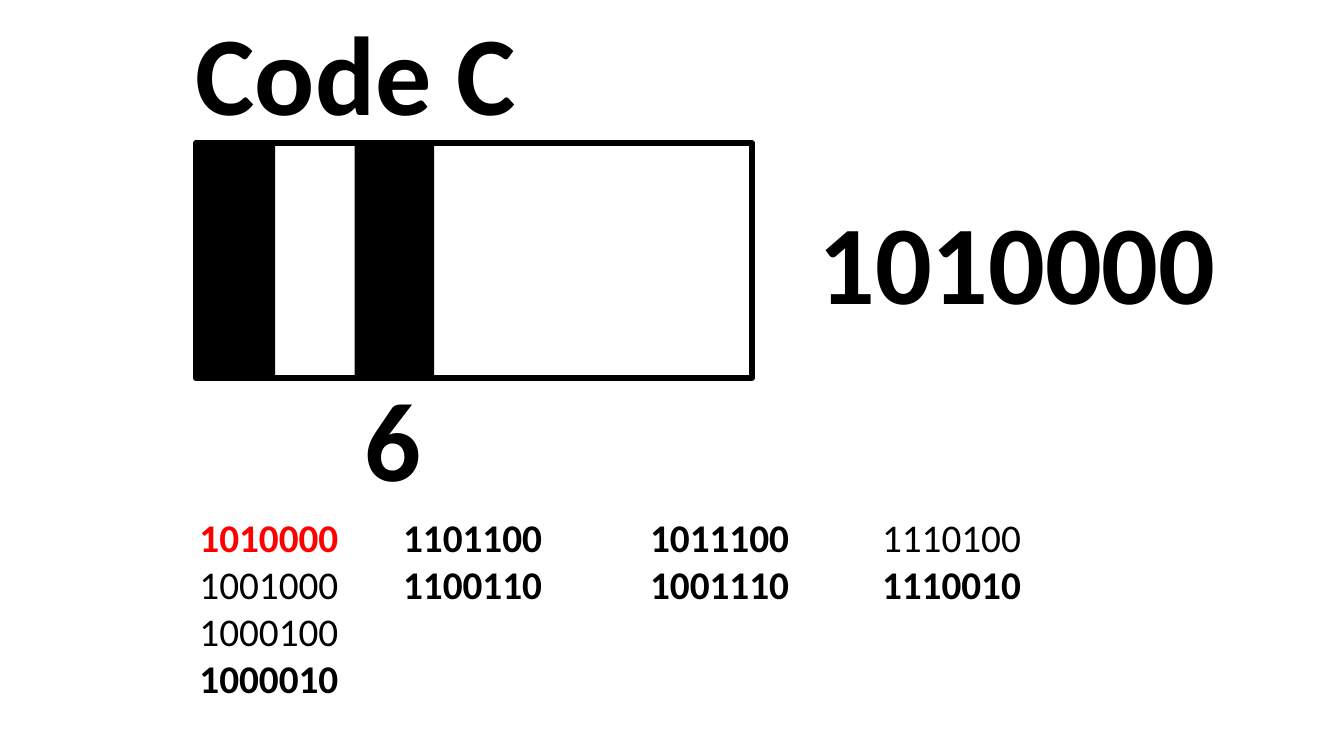
from dataclasses import dataclass
from pptx import Presentation
from pptx.dml.color import RGBColor
from pptx.enum.shapes import MSO_SHAPE
from pptx.enum.text import MSO_ANCHOR, MSO_AUTO_SIZE, PP_ALIGN
from pptx.util import Inches, Pt


@dataclass(frozen=True)
class Theme:
    font: str = "Calibri"
    ink: RGBColor = RGBColor(0, 0, 0)
    mark: RGBColor = RGBColor(255, 0, 0)
    large: int = 80
    small: int = 28
    frame: int = 4


THEME = Theme()
CODE = "1010000"
LISTS = [
    (1.88, 2.02, [(CODE, True), ("1001000", False), ("1000100", False), ("1000010", True)]),
    (3.9, 2.27, [("1101100", True), ("1100110", True)]),
    (6.35, 2.27, [("1011100", True), ("1001110", True)]),
    (8.65, 2.27, [("1110100", False), ("1110010", True)]),
]


def write(para, text, size=THEME.large, bold=True, color=THEME.ink):
    para.alignment = PP_ALIGN.LEFT
    run = para.add_run()
    run.text = text
    font = run.font
    font.name = THEME.font
    font.size = Pt(size)
    font.bold = bold
    font.color.rgb = color


def add_title(slide, box, text):
    title = slide.shapes.title
    title.left, title.top, title.width, title.height = map(Inches, box)
    frame = title.text_frame
    frame.word_wrap = True
    frame.auto_size = MSO_AUTO_SIZE.NONE
    frame.vertical_anchor = MSO_ANCHOR.TOP
    write(frame.paragraphs[0], text)


def add_text(slide, box, lines):
    frame = slide.shapes.add_textbox(*map(Inches, box)).text_frame
    frame.word_wrap = True
    frame.auto_size = MSO_AUTO_SIZE.SHAPE_TO_FIT_TEXT
    for index, style in enumerate(lines):
        para = frame.add_paragraph() if index else frame.paragraphs[0]
        write(para, **style)


def add_rect(slide, box):
    rect = slide.shapes.add_shape(MSO_SHAPE.RECTANGLE, *map(Inches, box))
    rect.shadow.inherit = False
    return rect


def add_code(slide, box, code):
    left, top, width, height = box
    frame = add_rect(slide, box)
    frame.fill.background()
    frame.line.color.rgb = THEME.ink
    frame.line.width = Pt(THEME.frame)
    step = width / len(code)
    for index, bit in enumerate(code):
        if bit == "1":
            bar = add_rect(slide, (left + index * step, top, step, height))
            bar.fill.solid()
            bar.fill.fore_color.rgb = THEME.ink
            bar.line.fill.background()


def add_lists(slide, top):
    for left, width, rows in LISTS:
        lines = [
            dict(text=text, bold=bold, size=THEME.small,
                 color=THEME.mark if text == CODE else THEME.ink)
            for text, bold in rows
        ]
        add_text(slide, (left, top, width, 0.1 + 0.47 * len(rows)), lines)


def main():
    deck = Presentation()
    deck.slide_width, deck.slide_height = Inches(13.33), Inches(7.5)
    slide = deck.slides.add_slide(deck.slide_layouts[5])
    add_title(slide, (1.84, -0.02, 5.62, 1.45), "Code C")
    add_code(slide, (1.94, 1.42, 5.52, 2.33), CODE)
    add_text(slide, (3.52, 3.62, 1, 1.45), [dict(text="6")])
    add_text(slide, (8.02, 1.86, 4.3, 1.45), [dict(text=CODE)])
    add_lists(slide, 5.04)
    deck.save("out.pptx")


if __name__ == "__main__":
    main()
